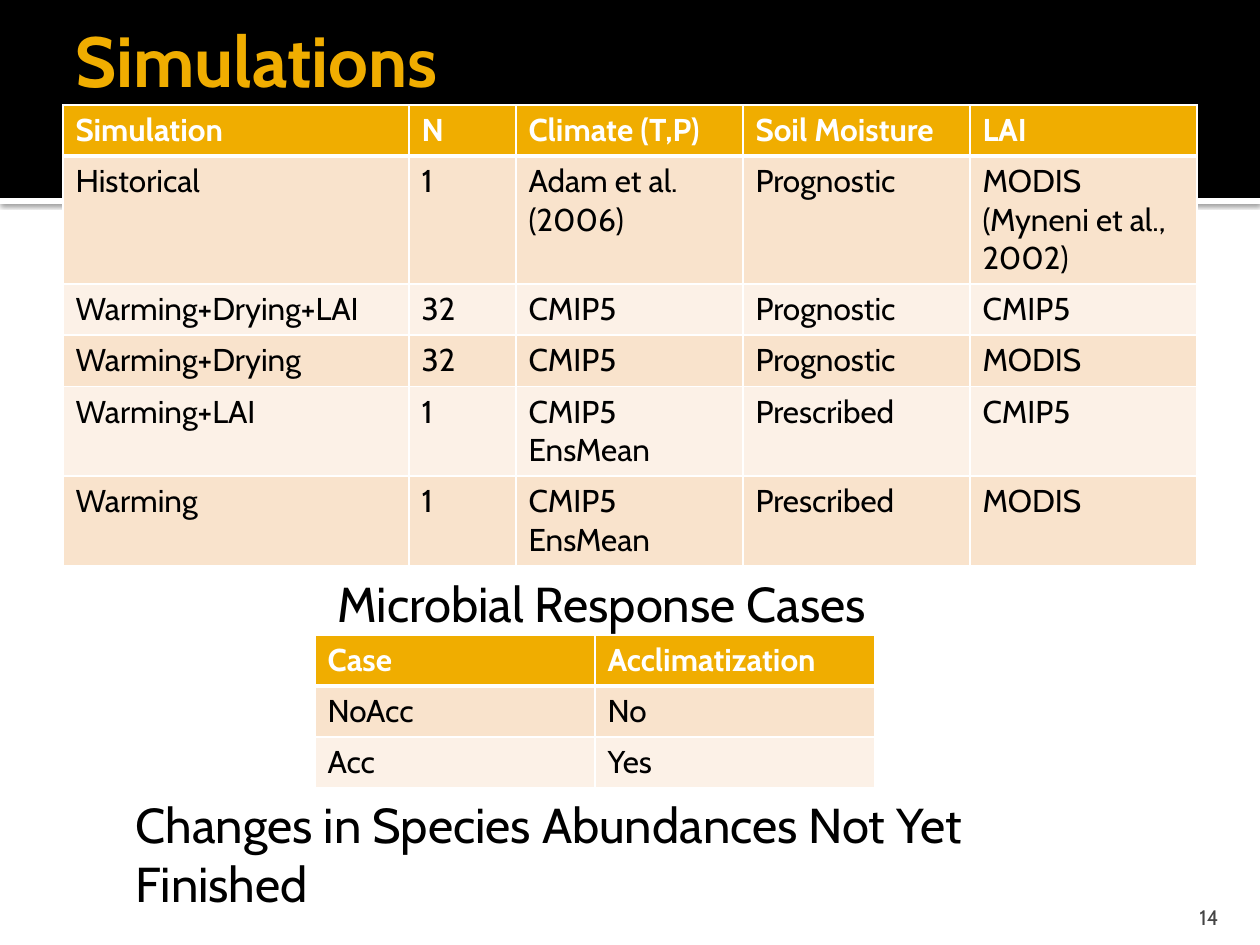
from lxml.etree import SubElement
from pptx import Presentation
from pptx.dml.color import RGBColor
from pptx.enum.shapes import MSO_SHAPE as Preset
from pptx.enum.text import MSO_ANCHOR as Anchor, MSO_AUTO_SIZE as AutoSize, PP_ALIGN as Align
from pptx.oxml.ns import qn
from pptx.util import Pt

FONT = "Cabin"
GOLD, WHITE, BLACK, GREY = "F0AD00", "FFFFFF", "000000", "454545"
STRIPES = ("F9E3CC", "FCF1E7")
ROW_HEIGHT = 51

SIMULATIONS = [
    ("Simulation", "N", "Climate (T,P)", "Soil Moisture", "LAI"),
    ("Historical", "1", "Adam et al. (2006)", "Prognostic", "MODIS (Myneni et al., 2002)"),
    ("Warming+Drying+LAI", "32", "CMIP5", "Prognostic", "CMIP5"),
    ("Warming+Drying", "32", "CMIP5", "Prognostic", "MODIS"),
    ("Warming+LAI", "1", "CMIP5 EnsMean", "Prescribed", "CMIP5"),
    ("Warming", "1", "CMIP5 EnsMean", "Prescribed", "MODIS"),
]
CASES = [("Case", "Acclimatization"), ("NoAcc", "No"), ("Acc", "Yes")]


def px(length):
    """Turn pixels at 126 to the inch into EMU."""
    return round(length * 914400 / 126)


def color(hex_text):
    """Turn a hex string into a colour."""
    return RGBColor.from_string(hex_text)


def write(frame, text, *, size=18, ink=BLACK, bold=False, align=Align.LEFT):
    """Put one formatted paragraph into a text frame."""
    paragraph = frame.paragraphs[0]
    paragraph.alignment = align
    run = paragraph.add_run()
    run.text = text
    run.font.name = FONT
    run.font.size = Pt(size)
    run.font.bold = bold
    run.font.color.rgb = color(ink)


def set_border(cell, side, points):
    """Draw one white side of a table cell."""
    line = SubElement(cell._tc.get_or_add_tcPr(), qn(f"a:ln{side}"), w=str(Pt(points)))
    SubElement(SubElement(line, qn("a:solidFill")), qn("a:srgbClr"), val=WHITE)


class SlideBuilder:
    """Hold the slide and add styled elements to it."""

    def __init__(self, slide):
        """Keep the current slide."""
        self.slide = slide
        self.shapes = slide.shapes

    def band(self, left, top, width, height, fill):
        """Add a plain filled rectangle."""
        band = self.shapes.add_shape(Preset.RECTANGLE, px(left), px(top), px(width), px(height))
        band.shadow.inherit = False
        band.fill.solid()
        band.fill.fore_color.rgb = color(fill)
        band.line.fill.background()
        return band

    def shadowed_band(self, left, top, width, height, fill):
        """Add a rectangle with a soft shadow below it."""
        band = self.band(left, top, width, height, fill)
        effects = band.element.spPr.find(qn("a:effectLst"))
        shadow = SubElement(effects, qn("a:outerShdw"), blurRad=str(Pt(2.5)), dist=str(Pt(0.8)),
                            dir="5400000", algn="tl", rotWithShape="0")
        tint = SubElement(shadow, qn("a:srgbClr"), val=BLACK)
        SubElement(tint, qn("a:alpha"), val="60000")

    def title(self, left, top, width, height, text):
        """Fill the title placeholder and bring it in front of the bands."""
        title = self.shapes.title
        title.left, title.top, title.width, title.height = map(px, (left, top, width, height))
        frame = title.text_frame
        frame.auto_size = AutoSize.NONE
        frame.vertical_anchor = Anchor.MIDDLE
        frame.margin_right = px(6)
        write(frame, text, size=40.5, ink=GOLD, bold=True)
        title.element.getparent().append(title.element)

    def text(self, left, top, width, height, text, *, anchor=Anchor.TOP, bottom=6, **style):
        """Add a wrapping text box."""
        frame = self.shapes.add_textbox(px(left), px(top), px(width), px(height)).text_frame
        frame.word_wrap = True
        frame.vertical_anchor = anchor
        frame.margin_bottom = px(bottom)
        write(frame, text, **style)

    def table(self, left, top, widths, rows):
        """Add a table with a gold header and striped body."""
        table = self.shapes.add_table(len(rows), len(widths), px(left), px(top),
                                      px(sum(widths)), px(ROW_HEIGHT * len(rows))).table
        for column, width in zip(table.columns, widths):
            column.width = px(width)
        for r, values in enumerate(rows):
            table.rows[r].height = px(ROW_HEIGHT)
            header = r == 0
            for c, value in enumerate(values):
                cell = table.cell(r, c)
                write(cell.text_frame, value, ink=WHITE if header else BLACK, bold=header)
                for side in "LRTB":
                    set_border(cell, side, 3 if (r, side) in ((0, "B"), (1, "T")) else 1)
                cell.fill.solid()
                cell.fill.fore_color.rgb = color(GOLD if header else STRIPES[(r - 1) % 2])


def main():
    """Build and save the simulations slide."""
    deck = Presentation()
    deck.slide_width, deck.slide_height = px(1260), px(945)
    builder = SlideBuilder(deck.slides.add_slide(deck.slide_layouts[5]))
    builder.shadowed_band(0, 198, 1260, 6, WHITE)
    builder.band(0, 0, 1260, 198, BLACK)
    builder.title(63, 10, 1134, 98, "Simulations")
    builder.table(63, 105, (346, 107, 227, 227, 227), SIMULATIONS)
    builder.text(1130, 892, 101, 38, "14", anchor=Anchor.BOTTOM, bottom=0,
                 size=12, ink=GREY, align=Align.RIGHT)
    builder.table(315, 635, (280, 280), CASES)
    builder.text(325, 567, 615, 72, "Microbial Response Cases", size=28)
    builder.text(123, 788, 999, 72, "Changes in Species Abundances Not Yet Finished", size=28)
    deck.save("out.pptx")


if __name__ == "__main__":
    main()
